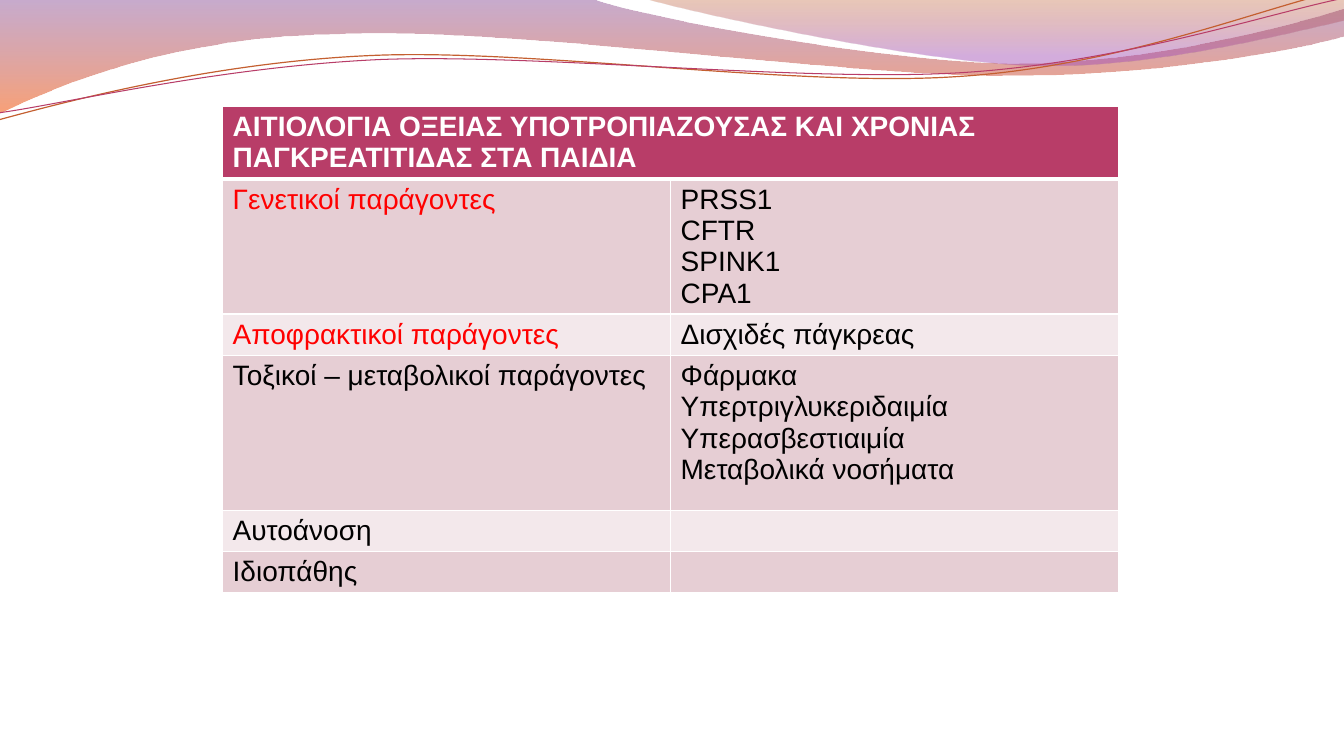
"""Builds a slide with a table of the causes of pancreatitis in children."""
from dataclasses import dataclass

from lxml import etree
from pptx import Presentation
from pptx.dml.color import RGBColor
from pptx.oxml.ns import qn
from pptx.util import Cm, Pt

BLANK_LAYOUT = 6


@dataclass(frozen=True)
class Theme:
    font: str = "Arial"
    size: float = 20
    header: str = "B83D68"
    bands: tuple = ("E6CED4", "F3E8EB")
    white: str = "FFFFFF"
    text: str = "000000"
    accent: str = "FF0000"
    orange: str = "C45F30"
    wide_wave: tuple = ((0, "834591", 45), (1, "F35307", 55))
    right_wave: tuple = ((0, "B74915", 30), (0.8, "A14BB4", 45))


THEME = Theme()


def write_text(cell, text, color=THEME.text, bold=False):
    """Write each line of text as one formatted paragraph."""
    frame = cell.text_frame
    frame.text = text
    for paragraph in frame.paragraphs:
        paragraph.font.name = THEME.font
        paragraph.font.size = Pt(THEME.size)
        for run in paragraph.runs:
            run.font.name = THEME.font
            run.font.size = Pt(THEME.size)
            run.font.bold = bold
            run.font.color.rgb = RGBColor.from_string(color)


def draw_wave(shapes, start, segments, closed):
    """Draw straight (x, y) and cubic (x1, y1, x2, y2, x, y) segments in cm."""
    points = [
        (Cm(segment[i]), Cm(segment[i + 1]))
        for segment in segments for i in range(0, len(segment), 2)
    ]
    builder = shapes.build_freeform(Cm(start[0]), Cm(start[1]))
    builder.add_line_segments(points, close=closed)
    wave = builder.convert_to_shape()
    wave.shadow.inherit = False
    steps = iter(list(wave.element.iter(qn("a:lnTo"))))
    for segment in segments:
        first = next(steps)
        if len(segment) == 6:
            curve = etree.Element(qn("a:cubicBezTo"))
            first.addprevious(curve)
            for step in (first, next(steps), next(steps)):
                curve.append(step[0])
                step.getparent().remove(step)
    return wave


presentation = Presentation()
presentation.slide_width = Cm(33.87)
presentation.slide_height = Cm(19.05)
slide = presentation.slides.add_slide(presentation.slide_layouts[BLANK_LAYOUT])
slide.background.fill.solid()
slide.background.fill.fore_color.rgb = RGBColor.from_string(THEME.white)

filled_waves = [
    (THEME.wide_wave, (0, 0), [
        (14.91, -0.03),
        (16.1, 0.43, 22.48, 1.6, 25.68, 1.6),
        (28.91, 1.6, 32.46, 0.66, 33.86, 0.23),
        (33.91, 0.91),
        (33.3, 1.12, 29.46, 1.93, 25.25, 1.91),
        (21.06, 1.91, 12.93, 0.71, 8.71, 0.86),
        (4.37, 0.91, 1.55, 2.11, -0.03, 2.87),
    ]),
    (THEME.right_wave, (16.23, -0.03), [
        (17.25, 0.28, 23.09, 1.57, 26.04, 1.65),
        (28.98, 1.75, 32.56, 0.81, 33.86, 0.53),
        (33.86, 0),
    ]),
]
for gradient, start, segments in filled_waves:
    wave = draw_wave(slide.shapes, start, segments, closed=True)
    wave.line.fill.background()
    wave.fill.gradient()
    wave.fill.gradient_angle = 270
    for stop, (position, color, _) in zip(wave.fill.gradient_stops, gradient):
        stop.position = position
        stop.color.rgb = RGBColor.from_string(color)
    stop_colors = wave.element.spPr.iter(qn("a:srgbClr"))
    for stop_color, (_, _, opacity) in zip(stop_colors, gradient):
        etree.SubElement(stop_color, qn("a:alpha"), val=str(opacity * 1000))

line_waves = [
    (THEME.orange, 0.85, (-0.03, 3.02), [
        (1.63, 2.57, 5.36, 1.57, 9.37, 1.4),
        (13.39, 1.22, 20.07, 2.21, 24.13, 1.93),
        (28.19, 1.68, 31.8, 0.2, 33.81, -0.25),
    ]),
    (THEME.header, 0.75, (0, 2.84), [
        (1.6, 2.62, 5.54, 1.68, 9.6, 1.5),
        (13.64, 1.35, 20.22, 2.08, 24.26, 1.83),
        (28.32, 1.57, 31.88, 0.36, 33.88, -0.05),
    ]),
]
line_pair = slide.shapes.add_group_shape()
for color, width, start, segments in line_waves:
    wave = draw_wave(line_pair.shapes, start, segments, closed=False)
    wave.fill.background()
    wave.line.color.rgb = RGBColor.from_string(color)
    wave.line.width = Pt(width)

heading = "ΑΙΤΙΟΛΟΓΙΑ ΟΞΕΙΑΣ ΥΠΟΤΡΟΠΙΑΖΟΥΣΑΣ ΚΑΙ ΧΡΟΝΙΑΣ ΠΑΓΚΡΕΑΤΙΤΙΔΑΣ ΣΤΑ ΠΑΙΔΙΑ"
causes = [
    ("Γενετικοί παράγοντες", "PRSS1\nCFTR\nSPINK1\nCPA1", THEME.accent),
    ("Αποφρακτικοί παράγοντες", "Δισχιδές πάγκρεας", THEME.accent),
    ("Τοξικοί – μεταβολικοί παράγοντες",
     "Φάρμακα\nΥπερτριγλυκεριδαιμία\nΥπερασβεστιαιμία\nΜεταβολικά νοσήματα", THEME.text),
    ("Αυτοάνοση", "", THEME.text),
    ("Ιδιοπάθης", "", THEME.text),
]
row_heights = [1.82, 3.39, 1.04, 3.9, 1.04, 1.04]
column_width = 11.29

causes_table = slide.shapes.add_table(
    len(row_heights), 2, Cm(5.61), Cm(2.68), Cm(2 * column_width), Cm(sum(row_heights))
).table
for column in causes_table.columns:
    column.width = Cm(column_width)
for row, height in zip(causes_table.rows, row_heights):
    row.height = Cm(height)

causes_table.cell(0, 0).merge(causes_table.cell(0, 1))
write_text(causes_table.cell(0, 0), heading, color=THEME.white, bold=True)
for index, (cause, examples, color) in enumerate(causes, start=1):
    write_text(causes_table.cell(index, 0), cause, color=color)
    write_text(causes_table.cell(index, 1), examples)

for index, row in enumerate(causes_table.rows):
    row_color = THEME.bands[(index - 1) % 2] if index else THEME.header
    border_widths = {
        "a:lnL": 1,
        "a:lnR": 1,
        "a:lnT": 3 if index == 1 else 1,
        "a:lnB": 3 if index == 0 else 1,
    }
    for cell in row.cells:
        cell.fill.solid()
        cell.fill.fore_color.rgb = RGBColor.from_string(row_color)
        properties = cell._tc.get_or_add_tcPr()
        for place, (side, width) in enumerate(border_widths.items()):
            border = etree.Element(qn(side), w=str(Pt(width)))
            border_fill = etree.SubElement(border, qn("a:solidFill"))
            etree.SubElement(border_fill, qn("a:srgbClr"), val=THEME.white)
            properties.insert(place, border)

presentation.save("out.pptx")
